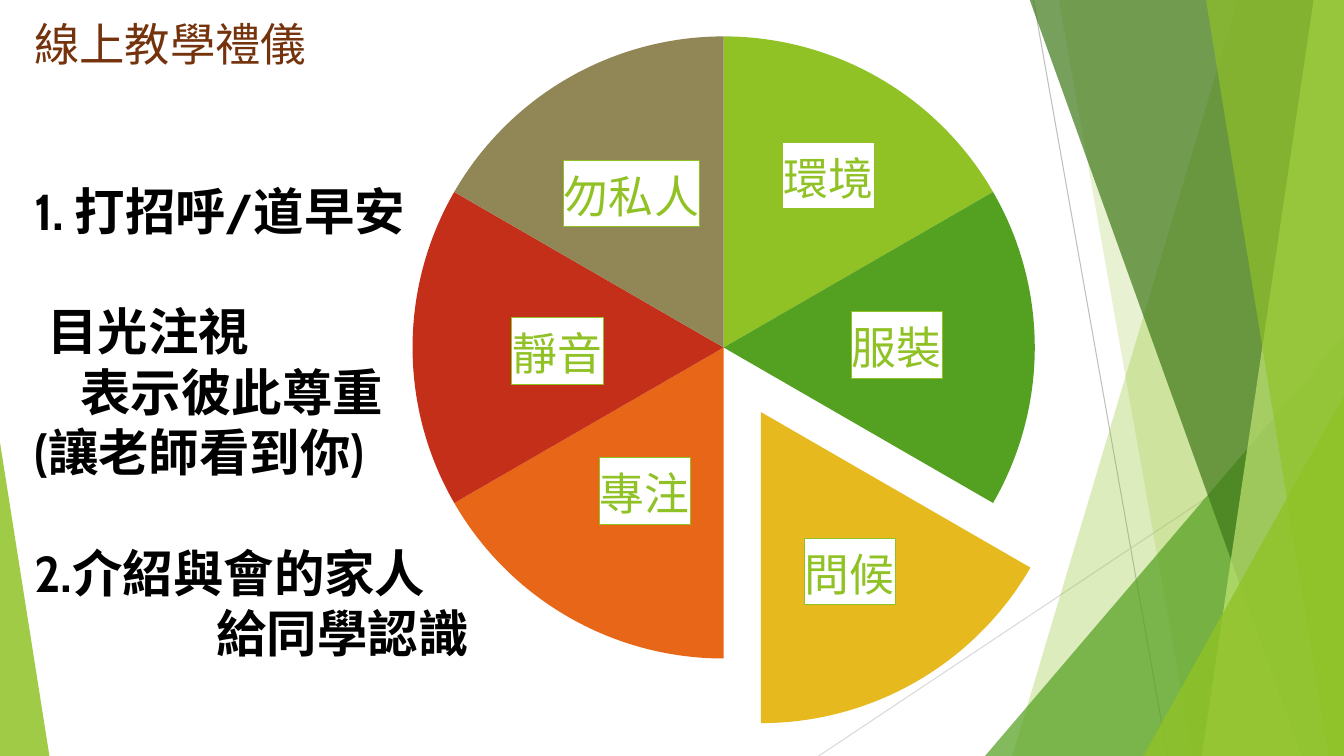
from math import cos, radians, sin

from pptx import Presentation
from pptx.chart.data import CategoryChartData
from pptx.dml.color import RGBColor
from pptx.enum.chart import XL_CHART_TYPE, XL_LABEL_POSITION
from pptx.enum.shapes import MSO_CONNECTOR, MSO_SHAPE
from pptx.oxml import parse_xml
from pptx.oxml.ns import nsdecls, qn
from pptx.util import Inches, Pt

STRAIGHT = MSO_CONNECTOR.STRAIGHT
TRIANGLE = MSO_SHAPE.ISOSCELES_TRIANGLE
PIE = XL_CHART_TYPE.PIE
OUTSIDE_END = XL_LABEL_POSITION.OUTSIDE_END
FONT = "Cabin"
GREEN = "90C226"


def color(value):
    return RGBColor.from_string(value)


def paint(shape, fill, opacity):
    shape.shadow.inherit = False
    shape.line.fill.background()
    shape.fill.solid()
    shape.fill.fore_color.rgb = color(fill)
    tone = shape.fill._xPr.find(qn("a:solidFill"))[0]
    tone.append(parse_xml(f'<a:alpha {nsdecls("a")} val="{opacity * 1000}"/>'))


deck = Presentation()
deck.slide_width, deck.slide_height = Inches(13.33), Inches(7.5)
page = deck.slides.add_slide(deck.slide_layouts[6])

# Thin background lines
for x1, y1, x2, y2, tint in [(10.25, 0, 11.58, 7.5, "BFBFBF"),
                             (13.33, 4.03, 8.12, 7.5, "D9D9D9")]:
    line = page.shapes.add_connector(STRAIGHT, Inches(x1), Inches(y1), Inches(x2), Inches(y2))
    line.line.color.rgb = color(tint)
    line.line.width = Pt(0.75)
    line._element.spPr.append(parse_xml(f'<a:effectLst {nsdecls("a")}/>'))

# Translucent facets: bands by top and bottom x, triangles by box and apex
facets = [
    ("band", (12.28, 10.04), GREEN, 30),
    ("band", (10.5, 11.83), GREEN, 20),
    ("triangle", (9.77, 3.33, 3.56, 4.17, 1), "54A021", 72),
    ("band", (10.21, 12.91), "3F7819", 70),
    ("band", (13.03, 11.92), "C0E474", 70),
    ("band", (11.96, 13.18), GREEN, 65),
    ("triangle", (11.34, 3.93, 1.99, 3.57, 1), GREEN, 80),
    ("triangle", (0, 4.39, 0.49, 3.11, 0), GREEN, 85),
]
for kind, place, fill, opacity in facets:
    if kind == "band":
        top_x, bottom_x = place
        outline = page.shapes.build_freeform(Inches(top_x), Inches(-0.01))
        corners = [(13.33, -0.01), (13.33, 7.5), (bottom_x, 7.5)]
        outline.add_line_segments([(Inches(x), Inches(y)) for x, y in corners], close=True)
        facet = outline.convert_to_shape()
    else:
        facet = page.shapes.add_shape(TRIANGLE, *[Inches(value) for value in place[:4]])
        facet.adjustments[0] = place[4]
    paint(facet, fill, opacity)

# Etiquette pie: name, slice colour, left and top of its label
slices = [
    ("環境", GREEN, 7.77, 1.41),
    ("服裝", "54A021", 8.45, 3.09),
    ("問候", "E6B91E", 7.98, 5.34),
    ("專注", "E76618", 5.95, 4.54),
    ("靜音", "C42F1A", 5.08, 3.15),
    ("勿私人", "918655", 5.59, 1.59),
]
data = CategoryChartData()
data.categories = [name for name, *rest in slices]
data.add_series("Series 1", [17] * len(slices))
chart_width, chart_height = 13.33, 8.04
chart = page.shapes.add_chart(PIE, Inches(0), Inches(-0.13), Inches(chart_width),
                              Inches(chart_height), data).chart
chart.has_legend = False
chart.has_title = False
chart.font.name = FONT
chart.font.size = Pt(10)
chart.font.color.rgb = color("000000")
plot = chart.plots[0]
plot.vary_by_categories = True

# Fixed pie area
plot_area = chart._chartSpace.chart.plotArea
for old_layout in plot_area.findall(qn("c:layout")):
    plot_area.remove(old_layout)
plot_area.insert(0, parse_xml(
    f'<c:layout {nsdecls("c")}><c:manualLayout><c:layoutTarget val="inner"/>'
    '<c:xMode val="edge"/><c:yMode val="edge"/><c:x val="0.307"/><c:y val="0.061"/>'
    '<c:w val="0.463"/><c:h val="0.768"/></c:manualLayout></c:layout>'))

# Slices and their labels, moved inwards from the rim
center_x, center_y, rim = 7.18, 3.44, 3.15
greeting, pull = 2, 0.74
label_height = 0.65
above = [1, 0.5, 0, 0, 0.5, 1]
series = plot.series[0]
for index, (name, fill, left, top) in enumerate(slices):
    point = series.points[index]
    point.format.fill.solid()
    point.format.fill.fore_color.rgb = color(fill)
    point.format.line.fill.background()

    label = point.data_label
    span = label.text_frame.paragraphs[0].add_run()
    span.text = name
    span.font.name = FONT
    span.font.size = Pt(32)
    span.font.color.rgb = color(GREEN)
    label.position = OUTSIDE_END

    angle = radians(30 + 60 * index)
    reach = rim + (pull if index == greeting else 0)
    rim_left = center_x + reach * sin(angle) - (0.45 * len(name) if index > 2 else 0)
    rim_top = center_y - reach * cos(angle) - label_height * above[index]
    shift_x = (left - rim_left) / chart_width
    shift_y = (top - rim_top) / chart_height
    node = series._element.xpath(f"c:dLbls/c:dLbl[c:idx/@val={index}]")[0]
    node.insert(1, parse_xml(
        f'<c:layout {nsdecls("c")}><c:manualLayout><c:x val="{shift_x:.4f}"/>'
        f'<c:y val="{shift_y:.4f}"/></c:manualLayout></c:layout>'))
    node.find(qn("c:tx")).addnext(parse_xml(
        f'<c:spPr {nsdecls("c", "a")}><a:solidFill><a:srgbClr val="FFFFFF"/></a:solidFill>'
        f'<a:ln w="9525"><a:solidFill><a:srgbClr val="{GREEN}"/></a:solidFill></a:ln></c:spPr>'))

for leader in series._element.xpath(".//c:showLeaderLines"):
    leader.set("val", "0")
exploded = series._element.xpath(f"c:dPt[c:idx/@val={greeting}]")[0]
exploded.find(qn("c:spPr")).addprevious(parse_xml(f'<c:explosion {nsdecls("c")} val="24"/>'))

# Title and notes: runs, indent in inches, space before in points
box = page.shapes.add_textbox(Inches(0.24), Inches(0.11), Inches(9.4), Inches(7.16))
frame = box.text_frame
frame.word_wrap = True
lines = [
    (["線上教學禮儀"], 0, 0),
    (["1.", " ", "打招呼/道早安"], 0, 78),
    (["目光注視"], 0.13, 43),
    (["表示彼此尊重"], 0.46, 0),
    (["(讓老師看到你)"], 0, 0),
    (["2.介紹與會的家人"], 0, 43),
    (["給同學認識"], 1.81, 0),
]
for number, (texts, indent, gap) in enumerate(lines):
    para = frame.add_paragraph() if number else frame.paragraphs[0]
    para.space_before = Pt(gap)
    para._p.get_or_add_pPr().set("marL", str(Inches(indent)))
    for text in texts:
        is_note = number > 0 and text != " "
        span = para.add_run()
        span.text = text
        span.font.name = FONT
        span.font.size = Pt(36 if is_note else 32.4)
        span.font.bold = is_note
        span.font.color.rgb = color("000000" if number else "74330C")

deck.save("out.pptx")
